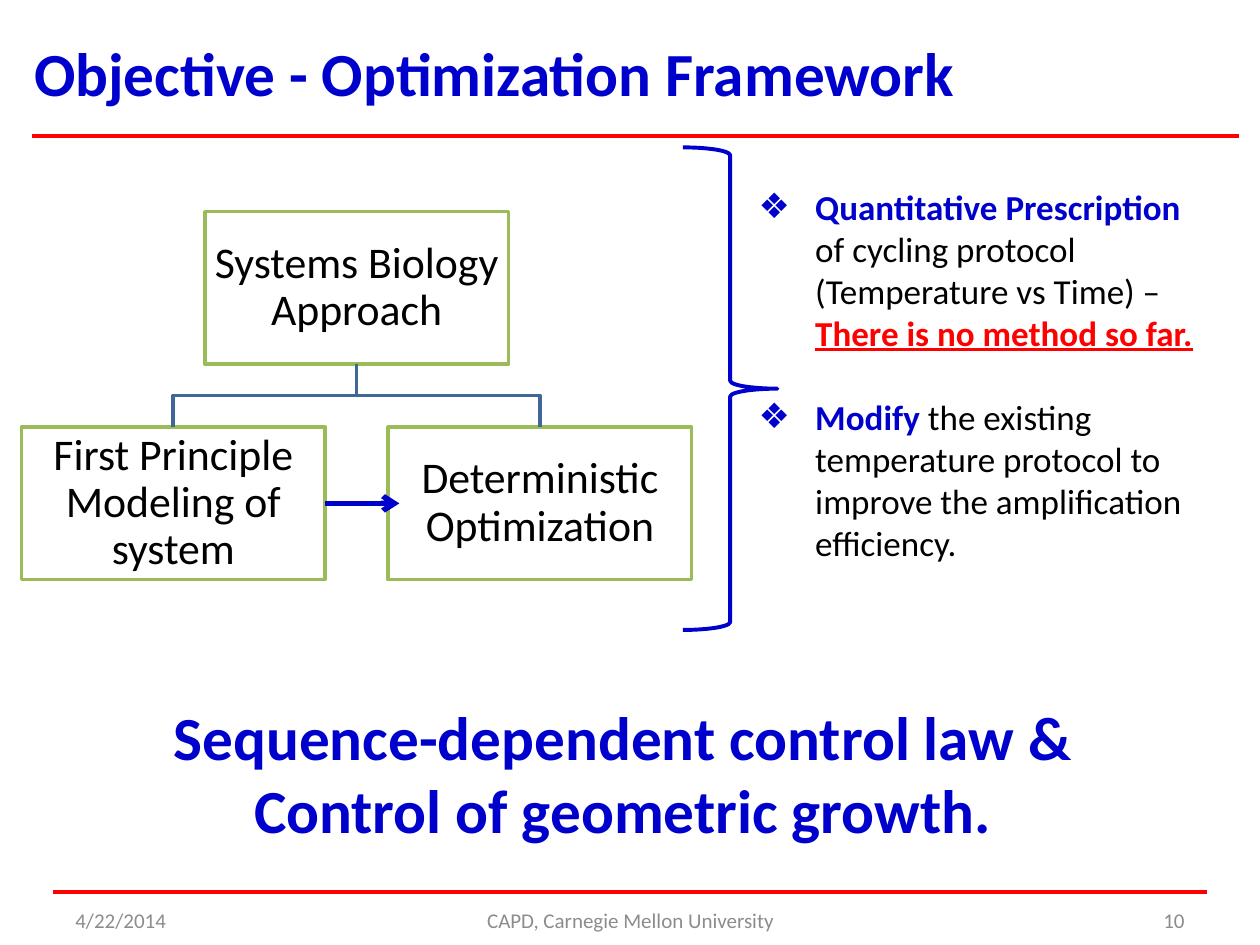
from lxml.etree import SubElement
from pptx import Presentation
from pptx.dml.color import RGBColor
from pptx.enum.shapes import MSO_CONNECTOR as Connector, MSO_SHAPE as Shape
from pptx.enum.text import MSO_ANCHOR as Anchor, MSO_AUTO_SIZE as AutoSize, PP_ALIGN as Align
from pptx.oxml.ns import qn
from pptx.util import Inches, Pt

BLUE, RED, BLACK, GRAY = "0000CC", "FF0000", "000000", "8C8C8C"
GREEN, STEEL, WHITE = "9BBB59", "3F6797", "FFFFFF"

TITLE = "Objective - Optimization Framework"
ROOT = "Systems Biology Approach"
BRANCHES = ["First Principle Modeling of system", "Deterministic Optimization"]
HEADING = dict(size=Pt(35), bold=True)
KEY = dict(size=Pt(20), bold=True)
PLAIN = dict(size=Pt(20), bold=False)
OUTCOMES = [
    [("Quantitative Prescription ", BLUE, KEY),
     ("of cycling protocol (Temperature vs Time) – ", BLACK, PLAIN),
     ("There is no method so far.", RED, dict(KEY, underline=True))],
    [("Modify", BLUE, KEY),
     (" the existing temperature protocol to improve the amplification efficiency.",
      BLACK, PLAIN)],
]
CONCLUSION = ["Sequence-dependent control law &", "Control of geometric growth."]
FOOTER = [  # text, left, width, alignment
    ("4/22/2014", 0.5, 2.33, Align.LEFT),
    ("CAPD, Carnegie Mellon University", 3.42, 3.17, Align.CENTER),
    ("10", 7.17, 2.33, Align.RIGHT),
]
RULES = [(0.25, 9.83, 1.08), (0.42, 9.58, 7.08)]  # start, end, height

# Tree grid: two columns, two rows, the root centred over the branches
TREE_LEFT, TREE_TOP = 0.17, 1.68
BOX_WIDTH, BOX_HEIGHT, GAP = 2.41, 1.21, 0.5
COLUMN, ROW = BOX_WIDTH + GAP, BOX_HEIGHT + GAP


def color(value):
    return RGBColor.from_string(value)


def place(shape, left, top, width, height):
    shape.left, shape.top = Inches(left), Inches(top)
    shape.width, shape.height = Inches(width), Inches(height)


def set_frame(frame, **values):
    values = dict(word_wrap=True, auto_size=AutoSize.NONE,
                  vertical_anchor=Anchor.TOP) | values
    for name, value in values.items():
        setattr(frame, name, value)


def add_span(para, text, hue, style):
    span = para.add_run()
    span.text = text
    span.font.name = "Calibri"
    span.font.color.rgb = color(hue)
    for name, value in style.items():
        setattr(span.font, name, value)


def add_text_box(slide, area, lines, hue, style, align, **frame_values):
    box = slide.shapes.add_textbox(*map(Inches, area))
    frame = box.text_frame
    set_frame(frame, **frame_values)
    for index, line in enumerate(lines):
        para = frame.add_paragraph() if index else frame.paragraphs[0]
        para.alignment = align
        add_span(para, line, hue, style)


def set_line(shape, hue, width):
    shape.line.color.rgb = color(hue)
    shape.line.width = Pt(width)


def add_line(slide, start, end, hue, width):
    line = slide.shapes.add_connector(Connector.STRAIGHT, *map(Inches, start + end))
    set_line(line, hue, width)
    SubElement(line._element.spPr, qn("a:effectLst"))
    return line


def add_tree_box(slide, text, column, row):
    box = slide.shapes.add_shape(
        Shape.RECTANGLE, Inches(TREE_LEFT + column * COLUMN),
        Inches(TREE_TOP + row * ROW), Inches(BOX_WIDTH), Inches(BOX_HEIGHT))
    box.shadow.inherit = False
    box.fill.solid()
    box.fill.fore_color.rgb = color(WHITE)
    set_line(box, GREEN, 2)
    margins = {f"margin_{side}": Inches(0.02) for side in ("left", "right", "top", "bottom")}
    set_frame(box.text_frame, vertical_anchor=Anchor.MIDDLE, **margins)
    para = box.text_frame.paragraphs[0]
    para.alignment, para.line_spacing = Align.CENTER, 0.9
    add_span(para, text, BLACK, dict(size=Pt(25)))
    return box


def add_branch(slide, parent, child):
    """Draw a right-angled line from the parent's bottom to the child's top."""
    start_x, start_y = parent.left + parent.width // 2, parent.top + parent.height
    end_x = child.left + child.width // 2
    middle_y = (start_y + child.top) // 2
    builder = slide.shapes.build_freeform(start_x, start_y)
    builder.add_line_segments(
        [(start_x, middle_y), (end_x, middle_y), (end_x, child.top)], close=False)
    branch = builder.convert_to_shape()
    branch.shadow.inherit = False
    branch.fill.background()
    set_line(branch, STEEL, 2)


def add_bullet(para, symbol, indent):
    props = para._p.get_or_add_pPr()
    props.set("marL", str(Inches(indent)))
    props.set("indent", str(-Inches(indent)))
    bullet_color = SubElement(props, qn("a:buClr"))
    SubElement(bullet_color, qn("a:srgbClr"), val=BLUE)
    SubElement(props, qn("a:buChar"), char=symbol)


def add_tree(slide):
    root = add_tree_box(slide, ROOT, 0.5, 0)
    children = [add_tree_box(slide, text, column, 1)
                for column, text in enumerate(BRANCHES)]
    for child in children:
        add_branch(slide, root, child)
    middle = TREE_TOP + ROW + BOX_HEIGHT / 2
    arrow = add_line(slide, (TREE_LEFT + BOX_WIDTH, middle), (3.17, middle), BLUE, 3)
    arrow.begin_connect(children[0], 3)
    SubElement(arrow.line._get_or_add_ln(), qn("a:tailEnd"), type="arrow")


def add_outcomes(slide, body):
    brace = slide.shapes.add_shape(Shape.RIGHT_BRACE, *map(Inches, (5.42, 1.17, 0.75, 3.83)))
    brace.shadow.inherit = False
    brace.fill.background()
    set_line(brace, BLUE, 2.25)
    place(body, 5.92, 1.42, 3.83, 3.13)
    frame = body.text_frame
    set_frame(frame)
    for index, spans in enumerate(OUTCOMES):
        para = frame.add_paragraph() if index else frame.paragraphs[0]
        para.space_before = Pt(24 if index else 0)
        add_bullet(para, "❖", 0.45)
        for span in spans:
            add_span(para, *span)


def main():
    deck = Presentation()
    deck.slide_width, deck.slide_height = Inches(10), Inches(7.5)
    slide = deck.slides.add_slide(deck.slide_layouts[1])
    title, body = slide.placeholders

    for start, end, height in RULES:
        add_line(slide, (start, height), (end, height), RED, 2.25)
    for text, left, width, align in FOOTER:
        add_text_box(slide, (left, 7.1, width, 0.4), [text], GRAY,
                     dict(size=Pt(12)), align, vertical_anchor=Anchor.MIDDLE)

    place(title, 0.17, 0.23, 7.75, 0.69)
    set_frame(title.text_frame)
    heading = title.text_frame.paragraphs[0]
    heading.alignment = Align.LEFT
    add_span(heading, TITLE, BLUE, HEADING)

    add_tree(slide)
    add_outcomes(slide, body)
    add_text_box(slide, (1.08, 5.5, 7.73, 1.28), CONCLUSION, BLUE, HEADING,
                 Align.CENTER, word_wrap=False)
    deck.save("out.pptx")


if __name__ == "__main__":
    main()
